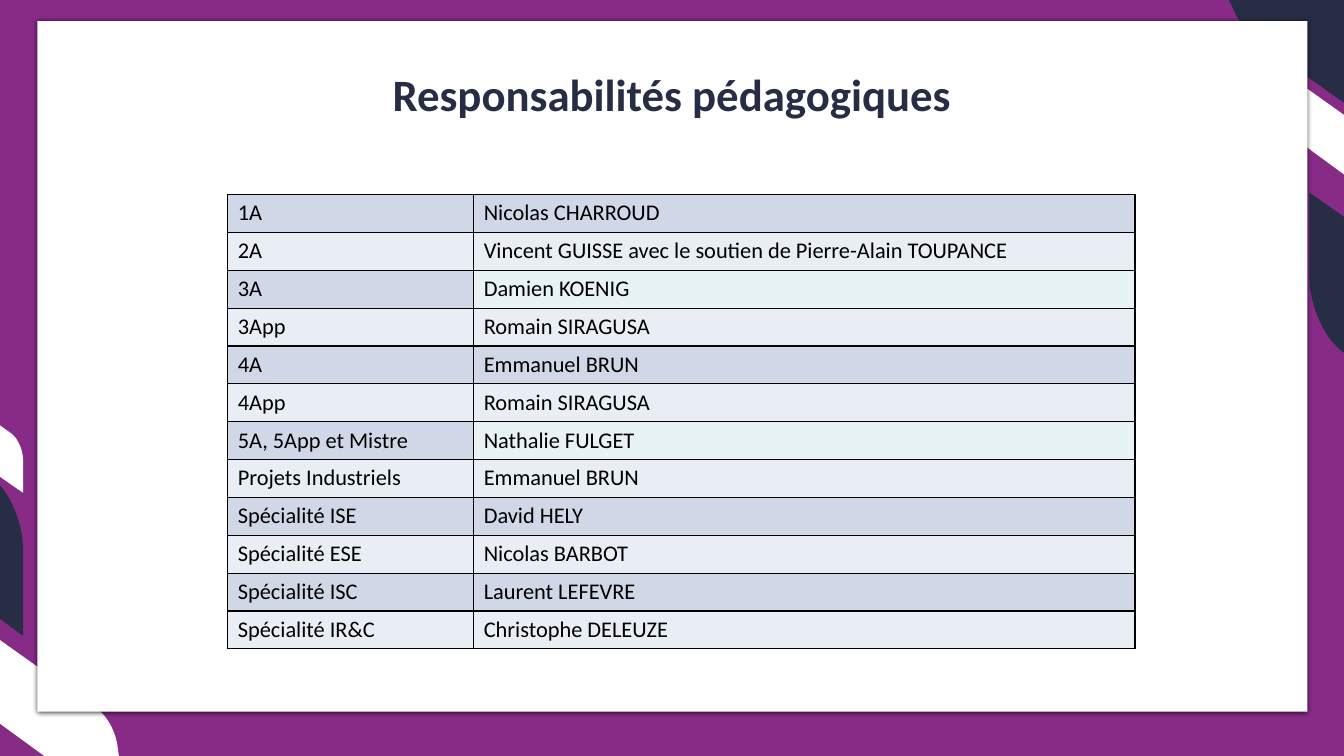
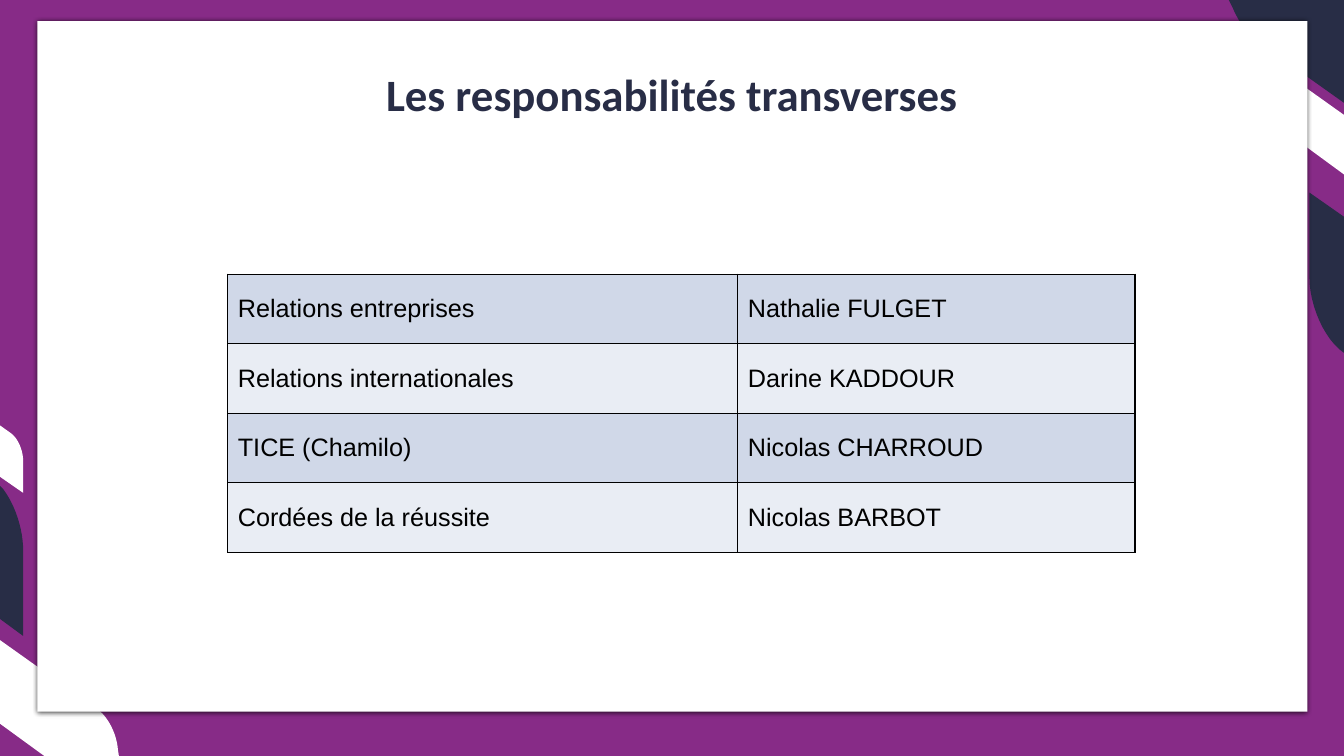
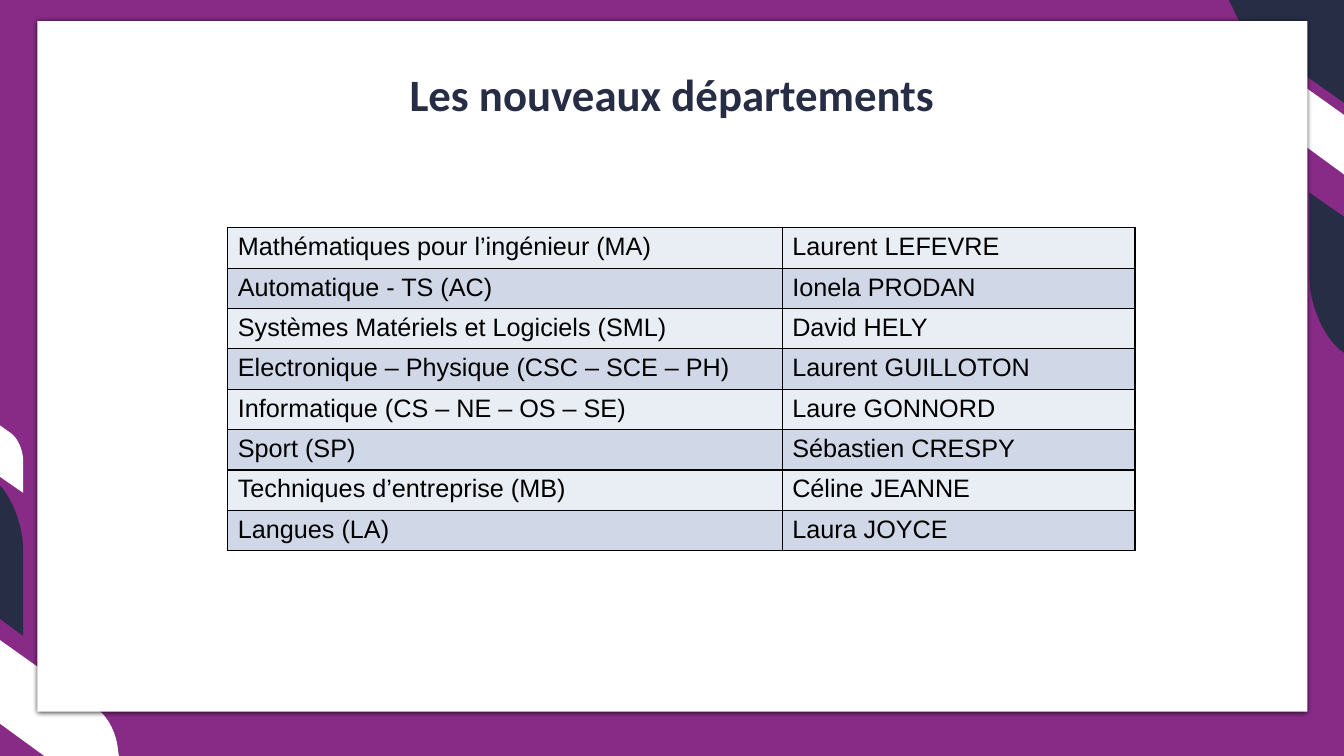
from dataclasses import dataclass
from typing import Iterator

from lxml import etree
from pptx import Presentation
from pptx import util as u
from pptx.dml.color import RGBColor
from pptx.enum import shapes, text
from pptx.oxml.ns import qn

Point = tuple[float, float]
Step = tuple[float, ...]  # x, y for a line; three x, y pairs for a curve


@dataclass(frozen=True)
class Theme:
    purple: str = "872B87"
    navy: str = "282D46"
    white: str = "FFFFFF"
    black: str = "000000"
    band_dark: str = "D0D8E8"
    band_light: str = "E9EDF4"
    band_mint: str = "E7F3F4"
    title_font: str = "Calibri"
    title_size: float = 32
    border: float = 1
    curve_steps: int = 12


@dataclass(frozen=True)
class Box:
    """A rectangle in percent of the slide's width and height."""
    left: float
    top: float
    width: float
    height: float


@dataclass(frozen=True)
class Ribbon:
    """A closed outline in percent of the slide's width and height."""
    color: str
    start: Point
    steps: tuple[Step, ...]


@dataclass(frozen=True)
class Roster:
    """A slide with a title and a two-column table."""
    title: str
    top: float
    row_height: float
    first_column: float  # percent of the table's width
    font: str
    size: float
    rows: tuple[tuple[str, str], ...]
    bands: tuple[str, str]
    mint_rows: tuple[int, ...] = ()
    anchor: text.MSO_ANCHOR = text.MSO_ANCHOR.TOP


THEME = Theme()
WIDTH, HEIGHT = u.Inches(13.33), u.Inches(7.5)
PAGE = Box(0, 0, 100, 100)
CARD = Box(2.78, 2.8, 94.5, 91.33)
TITLE = Box(16.25, 4, 67.5, 16.67)
TABLE_LEFT, TABLE_WIDTH = 16.95, 67.5

RIBBONS = (
    Ribbon(THEME.white, (0, 56.27), (
        (0.83, 57.33), (1.35, 58, 1.73, 59.6, 1.73, 61.07),
        (1.73, 65.2), (0, 63.07))),
    Ribbon(THEME.navy, (0, 64.27), (
        (0.23, 64.67), (1.13, 66.8, 1.73, 70, 1.73, 72.93),
        (1.73, 84.13), (0, 81.87))),
    Ribbon(THEME.white, (0, 84.67), (
        (7.28, 93.87), (8.03, 94.8, 8.7, 97.07, 8.78, 99.2),
        (8.85, 100), (3.3, 100), (0, 95.73))),
    Ribbon(THEME.navy, (91.43, 0), (
        (100, 0), (100, 13.6), (93.45, 5.33),
        (92.78, 4.4, 92.18, 2.93, 91.73, 1.07))),
    Ribbon(THEME.white, (96, 10.13), (
        (100, 15.2), (100, 23.07), (97.13, 19.33),
        (96.53, 18.67, 96, 16.67, 96, 15.07))),
    Ribbon(THEME.navy, (97.43, 25.47), (
        (100, 28.67), (100, 46.67),
        (98.55, 44.93, 97.43, 40.4, 97.43, 36.67))),
)

ROSTERS = (
    Roster(
        "Responsabilités pédagogiques", 25.73, 5.01, 27.11, "Calibri", 16,
        (
            ("1A", "Nicolas CHARROUD"),
            ("2A", "Vincent GUISSE avec le soutien de Pierre-Alain TOUPANCE"),
            ("3A", "Damien KOENIG"),
            ("3App", "Romain SIRAGUSA"),
            ("4A", "Emmanuel BRUN"),
            ("4App", "Romain SIRAGUSA"),
            ("5A, 5App et Mistre", "Nathalie FULGET"),
            ("Projets Industriels", "Emmanuel BRUN"),
            ("Spécialité ISE", "David HELY"),
            ("Spécialité ESE", "Nicolas BARBOT"),
            ("Spécialité ISC", "Laurent LEFEVRE"),
            ("Spécialité IR&C", "Christophe DELEUZE"),
        ),
        (THEME.band_dark, THEME.band_light), mint_rows=(2, 6)),
    Roster(
        "Les responsabilités transverses", 36.27, 9.2, 56.22, "Arial", 18,
        (
            ("Relations entreprises", "Nathalie FULGET"),
            ("Relations internationales", "Darine KADDOUR"),
            ("TICE (Chamilo)", "Nicolas CHARROUD"),
            ("Cordées de la réussite", "Nicolas BARBOT"),
        ),
        (THEME.band_dark, THEME.band_light), anchor=text.MSO_ANCHOR.MIDDLE),
    Roster(
        "Les nouveaux départements", 30.13, 5.07, 61.11, "Arial", 18,
        (
            ("Mathématiques pour l’ingénieur (MA)", "Laurent LEFEVRE"),
            ("Automatique - TS (AC)", "Ionela PRODAN"),
            ("Systèmes Matériels et Logiciels (SML)", "David HELY"),
            ("Electronique – Physique (CSC – SCE – PH)", "Laurent GUILLOTON"),
            ("Informatique (CS – NE – OS – SE)", "Laure GONNORD"),
            ("Sport (SP)", "Sébastien CRESPY"),
            ("Techniques d’entreprise (MB)", "Céline JEANNE"),
            ("Langues (LA)", "Laura JOYCE"),
        ),
        (THEME.band_light, THEME.band_dark)),
)


def across(percent: float) -> int:
    return round(WIDTH * percent / 100)


def down(percent: float) -> int:
    return round(HEIGHT * percent / 100)


def place(box: Box) -> tuple[int, int, int, int]:
    return across(box.left), down(box.top), across(box.width), down(box.height)


def paint(sp, color: str) -> None:
    """Give a shape a plain fill with no line and no shadow."""
    sp.shadow.inherit = False
    sp.fill.solid()
    sp.fill.fore_color.rgb = RGBColor.from_string(color)
    sp.line.fill.background()


def add_panel(slide, box: Box, color: str):
    sp = slide.shapes.add_shape(shapes.MSO_SHAPE.RECTANGLE, *place(box))
    paint(sp, color)
    return sp


def add_color(parent, color: str):
    return etree.SubElement(parent, qn("a:srgbClr"), val=color)


def cast_shadow(sp) -> None:
    effects = sp._element.spPr.find(qn("a:effectLst"))
    shadow = etree.SubElement(
        effects, qn("a:outerShdw"), blurRad=str(u.Pt(4)), dist=str(u.Pt(1)),
        dir=str(45 * 60000), algn="tl", rotWithShape="0")
    etree.SubElement(add_color(shadow, THEME.black), qn("a:alpha"), val="75000")


def trace(ribbon: Ribbon) -> Iterator[Point]:
    """Yield the outline's points, with each cubic curve cut into short lines."""
    x, y = ribbon.start
    for step in ribbon.steps:
        if len(step) == 2:
            yield step
        else:
            x1, y1, x2, y2, x3, y3 = step
            for i in range(1, THEME.curve_steps + 1):
                t = i / THEME.curve_steps
                s = 1 - t
                a, b, c, d = s ** 3, 3 * s * s * t, 3 * s * t * t, t ** 3
                yield (a * x + b * x1 + c * x2 + d * x3,
                       a * y + b * y1 + c * y2 + d * y3)
        x, y = step[-2:]


def add_ribbon(slide, ribbon: Ribbon) -> None:
    x, y = ribbon.start
    builder = slide.shapes.build_freeform(across(x), down(y))
    builder.add_line_segments([(across(px), down(py)) for px, py in trace(ribbon)])
    paint(builder.convert_to_shape(), ribbon.color)


def set_font(p, name: str, size: float, color: str, bold: bool = False) -> None:
    for r in p.runs:
        r.font.name, r.font.size, r.font.bold = name, u.Pt(size), bold
        r.font.color.rgb = RGBColor.from_string(color)


def add_title(slide, title: str) -> None:
    tf = slide.shapes.add_textbox(*place(TITLE)).text_frame
    tf.word_wrap = True
    tf.vertical_anchor = text.MSO_ANCHOR.MIDDLE
    tf.text = title
    p = tf.paragraphs[0]
    p.alignment = text.PP_ALIGN.CENTER
    set_font(p, THEME.title_font, THEME.title_size, THEME.navy, bold=True)


def add_borders(cell) -> None:
    props = cell._tc.get_or_add_tcPr()
    for i, side in enumerate(("a:lnL", "a:lnR", "a:lnT", "a:lnB")):
        line = etree.Element(qn(side), w=str(u.Pt(THEME.border)))
        add_color(etree.SubElement(line, qn("a:solidFill")), THEME.black)
        props.insert(i, line)


def add_roster_table(slide, roster: Roster) -> None:
    count = len(roster.rows)
    box = Box(TABLE_LEFT, roster.top, TABLE_WIDTH, roster.row_height * count)
    table = slide.shapes.add_table(count, 2, *place(box)).table
    table.first_row = table.horz_banding = False
    shares = (roster.first_column, 100 - roster.first_column)
    for column, share in zip(table.columns, shares):
        column.width = across(TABLE_WIDTH * share / 100)
    for i, row in enumerate(roster.rows):
        table.rows[i].height = down(roster.row_height)
        for j, label in enumerate(row):
            cell = table.cell(i, j)
            mint = j == 1 and i in roster.mint_rows
            color = THEME.band_mint if mint else roster.bands[i % 2]
            cell.fill.solid()
            cell.fill.fore_color.rgb = RGBColor.from_string(color)
            cell.vertical_anchor = roster.anchor
            cell.text_frame.text = label
            set_font(cell.text_frame.paragraphs[0],
                     roster.font, roster.size, THEME.black)
            add_borders(cell)


def add_backdrop(slide) -> None:
    add_panel(slide, PAGE, THEME.purple)
    for ribbon in RIBBONS:
        add_ribbon(slide, ribbon)
    cast_shadow(add_panel(slide, CARD, THEME.white))


def main() -> None:
    prs = Presentation()
    prs.slide_width, prs.slide_height = WIDTH, HEIGHT
    blank = prs.slide_layouts[6]
    for roster in ROSTERS:
        slide = prs.slides.add_slide(blank)
        add_backdrop(slide)
        add_title(slide, roster.title)
        add_roster_table(slide, roster)
    prs.save("out.pptx")


if __name__ == "__main__":
    main()
